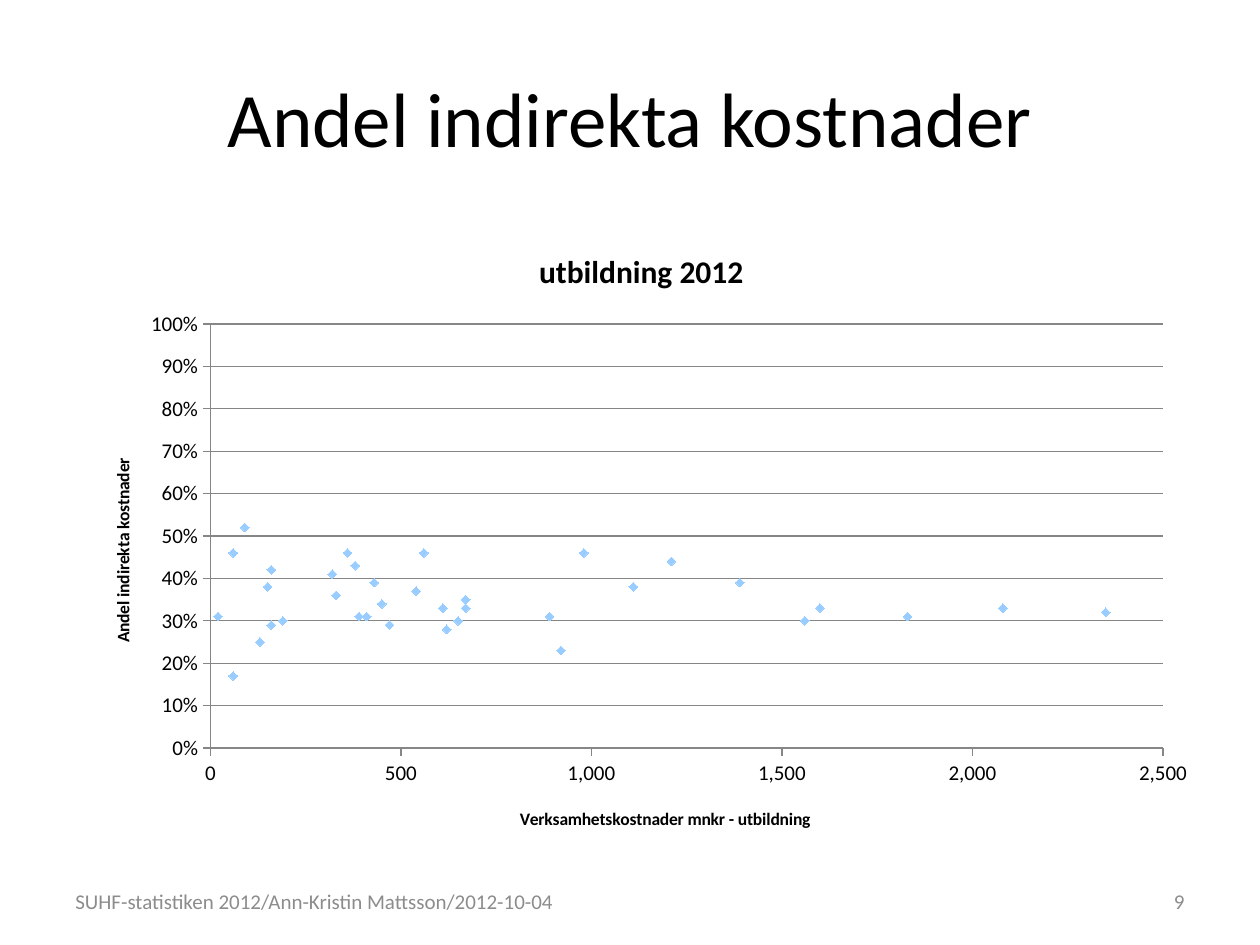
import pptx
import pptx.chart.data
import pptx.dml.color
import pptx.enum.chart
import pptx.enum.text
import pptx.oxml
import pptx.oxml.ns
import pptx.util

THEME = {
    "font": "Calibri",
    "text": pptx.dml.color.RGBColor.from_string("000000"),
    "muted": pptx.dml.color.RGBColor.from_string("8C8C8C"),
    "axis": pptx.dml.color.RGBColor.from_string("868686"),
    "marker": pptx.dml.color.RGBColor.from_string("99CCFF"),
    "title": pptx.util.Pt(44),
    "chart_title": pptx.util.Pt(18),
    "label": pptx.util.Pt(12),
    "axis_title": pptx.util.Pt(10),
}
ALIGN = pptx.enum.text.PP_ALIGN

# Operating cost in thousands of kronor, share of indirect cost
POINTS = [
    (320000, 0.41), (890000, 0.31), (60000, 0.46), (90000, 0.52),
    (2080000, 0.33), (450000, 0.34), (470000, 0.29), (160000, 0.29),
    (380000, 0.43), (190000, 0.3), (430000, 0.39), (560000, 0.46),
    (390000, 0.31), (330000, 0.36), (360000, 0.46), (670000, 0.33),
    (150000, 0.38), (920000, 0.23), (60000, 0.17), (160000, 0.42),
    (1210000, 0.44), (1390000, 0.39), (1110000, 0.38), (620000, 0.28),
    (2350000, 0.32), (980000, 0.46), (610000, 0.33), (540000, 0.37),
    (20000, 0.31), (130000, 0.25), (410000, 0.31), (650000, 0.3),
    (1830000, 0.31), (1560000, 0.3), (1600000, 0.33), (670000, 0.35),
]


def set_font(font, size, color, bold=False):
    values = {"name": THEME["font"], "size": THEME[size], "bold": bold}
    for name, value in values.items():
        setattr(font, name, value)
    font.color.rgb = THEME[color]


def set_layout(element, index, **shares):
    """Place a chart part by shares of the chart's size; index is the layout's child position."""
    for old in element.findall(pptx.oxml.ns.qn("c:layout")):
        element.remove(old)
    target = '<c:layoutTarget val="inner"/>' if "w" in shares else ""
    modes = "".join(f'<c:{k}Mode val="edge"/>' for k in "xy")
    sizes = "".join(f'<c:{k} val="{v}"/>' for k, v in shares.items())
    element.insert(index, pptx.oxml.parse_xml(
        f'<c:layout {pptx.oxml.ns.nsdecls("c")}><c:manualLayout>'
        f"{target}{modes}{sizes}</c:manualLayout></c:layout>"))


prs = pptx.Presentation()
prs.slide_width = pptx.util.Inches(10)
prs.slide_height = pptx.util.Inches(7.5)
s = prs.slides.add_slide(prs.slide_layouts[6])

texts = [
    ("Andel indirekta kostnader", (0.5, 0.3, 9, 1.25), ALIGN.CENTER, "title", "text"),
    ("9", (8.07, 6.95, 1.43, 0.4), ALIGN.RIGHT, "label", "muted"),
    ("SUHF-statistiken 2012/Ann-Kristin Mattsson/2012-10-04",
     (0.5, 6.95, 4.26, 0.4), ALIGN.LEFT, "label", "muted"),
]
for text, box, align, size, color in texts:
    tf = s.shapes.add_textbox(*map(pptx.util.Inches, box)).text_frame
    tf.word_wrap = True
    tf.vertical_anchor = pptx.enum.text.MSO_ANCHOR.MIDDLE
    p = tf.paragraphs[0]
    p.alignment = align
    r = p.add_run()
    r.text = text
    set_font(r.font, size, color)

data = pptx.chart.data.XyChartData()
series_data = data.add_series("Series 1")
for cost, share in POINTS:
    series_data.add_data_point(cost, share)
chart = s.shapes.add_chart(
    pptx.enum.chart.XL_CHART_TYPE.XY_SCATTER,
    *map(pptx.util.Inches, (0.59, 1.78, 9, 4.95)), data).chart
set_font(chart.font, "axis_title", "text")
chart.has_legend = False
chart.plots[0].vary_by_categories = False
set_layout(chart._chartSpace.chart.plotArea, 0, x=0.12, y=0.16, w=0.84, h=0.68)

series = chart.plots[0].series[0]
series.format.line.fill.background()
series.marker.style = pptx.enum.chart.XL_MARKER_STYLE.DIAMOND
series.marker.size = 5
series.marker.format.fill.solid()
series.marker.format.fill.fore_color.rgb = THEME["marker"]
series.marker.format.line.color.rgb = THEME["marker"]

axes = [
    (chart.category_axis, "Verksamhetskostnader mnkr - utbildning", "#,##0,",
     2500000, 500000, {"x": 0.39, "y": 0.93}),
    (chart.value_axis, "Andel indirekta kostnader", "0%",
     1, 0.1, {"x": 0.03, "y": 0.37}),
]
for axis, title, number_format, maximum, step, place in axes:
    values = {"minimum_scale": 0, "maximum_scale": maximum, "major_unit": step,
              "has_major_gridlines": axis is chart.value_axis,
              "major_tick_mark": pptx.enum.chart.XL_TICK_MARK.OUTSIDE,
              "minor_tick_mark": pptx.enum.chart.XL_TICK_MARK.NONE}
    for name, value in values.items():
        setattr(axis, name, value)
    axis.format.line.color.rgb = THEME["axis"]
    axis.tick_labels.number_format = number_format
    axis.tick_labels.number_format_is_linked = False
    set_font(axis.tick_labels.font, "label", "text")
    axis.axis_title.text_frame.text = title
    set_font(axis.axis_title.text_frame.paragraphs[0].runs[0].font,
             "axis_title", "text", bold=True)
    set_layout(axis.axis_title._element, 1, **place)
chart.value_axis.major_gridlines.format.line.color.rgb = THEME["axis"]

chart.has_title = True
chart.chart_title.include_in_layout = False
chart.chart_title.text_frame.text = "utbildning 2012"
set_font(chart.chart_title.text_frame.paragraphs[0].runs[0].font,
         "chart_title", "text", bold=True)

prs.save("out.pptx")
